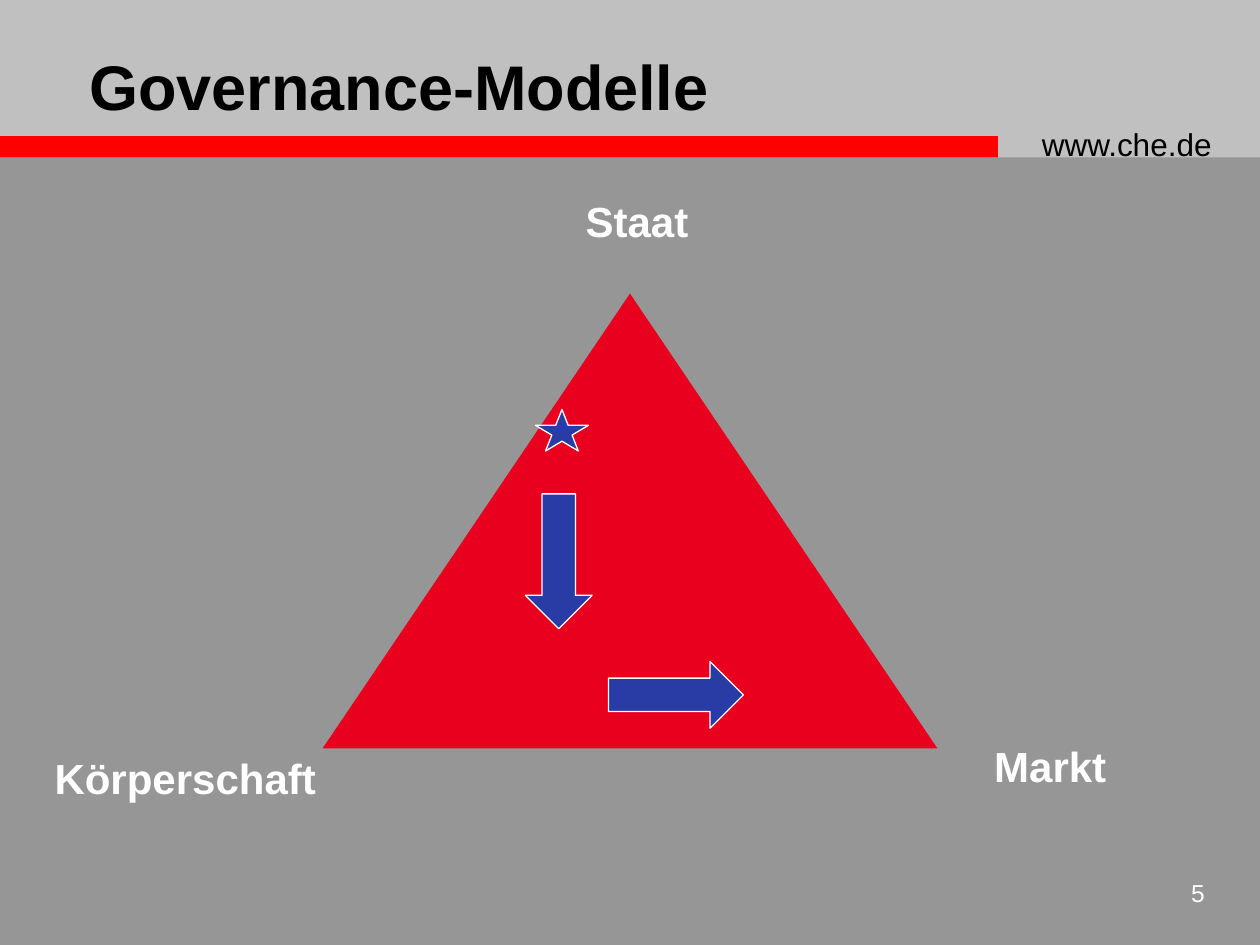
import pptx
import pptx.util
import pptx.dml.color
import pptx.enum.shapes
import pptx.enum.text

Inches = pptx.util.Inches
SHAPE = pptx.enum.shapes.MSO_SHAPE
ALIGN = pptx.enum.text.PP_ALIGN
ANCHOR = pptx.enum.text.MSO_ANCHOR

COLORS = {
    "back": "969696",
    "band": "C0C0C0",
    "bar": "FF0000",
    "area": "E8001E",
    "mark": "293BA5",
    "light": "FFFFFF",
    "dark": "000000",
}


def color(name):
    return pptx.dml.color.RGBColor.from_string(COLORS[name])


def add_form(slide, kind, box, fill, line=None):
    form = slide.shapes.add_shape(kind, *map(Inches, box))
    form.shadow.inherit = False
    form.fill.solid()
    form.fill.fore_color.rgb = color(fill)
    if line:
        form.line.color.rgb = color(line)
        form.line.width = pptx.util.Pt(0.75)
    else:
        form.line.fill.background()


def add_text(slide, text, box, size, ink, bold=False,
             align=ALIGN.LEFT, anchor=ANCHOR.TOP):
    frame = slide.shapes.add_textbox(*map(Inches, box)).text_frame
    frame.word_wrap = True
    frame.vertical_anchor = anchor
    frame.text = text
    para = frame.paragraphs[0]
    para.alignment = align
    font = para.runs[0].font
    font.name = "Arial"
    font.size = pptx.util.Pt(size)
    font.bold = bold
    font.color.rgb = color(ink)


def add_label(slide, text, box):
    add_text(slide, text, box, 24, "light", True, ALIGN.CENTER, ANCHOR.MIDDLE)


def add_mark(slide, kind, box):
    add_form(slide, kind, box, "mark", "light")


def add_frame(slide):
    """Draw the header, title, web address and page number."""
    add_form(slide, SHAPE.RECTANGLE, (0, 0, 10, 1.25), "band")
    add_form(slide, SHAPE.RECTANGLE, (-0.01, 1.08, 7.93, 0.17), "bar")
    add_text(slide, "www.che.de", (8.17, 0.94, 1.75, 0.4), 18, "dark")
    add_text(slide, "5", (9.08, 6.92, 0.58, 0.42), 14, "light",
             align=ALIGN.RIGHT)
    add_text(slide, "Governance-Modelle", (0.61, 0.3, 7.29, 0.75), 36, "dark",
             bold=True, anchor=ANCHOR.MIDDLE)


def main():
    deck = pptx.Presentation()
    deck.slide_width, deck.slide_height = Inches(10), Inches(7.5)
    slide = deck.slides.add_slide(deck.slide_layouts[6])
    slide.background.fill.solid()
    slide.background.fill.fore_color.rgb = color("back")

    add_frame(slide)
    add_form(slide, SHAPE.ISOSCELES_TRIANGLE, (2.56, 2.33, 4.88, 3.61), "area")
    add_label(slide, "Staat", (4.4, 1.5, 1.31, 0.5))
    add_label(slide, "Körperschaft", (0, 5.92, 2.94, 0.5))
    add_label(slide, "Markt", (7.67, 5.83, 1.33, 0.5))
    add_mark(slide, SHAPE.STAR_5_POINT, (4.25, 3.25, 0.42, 0.33))
    add_mark(slide, SHAPE.DOWN_ARROW, (4.17, 3.92, 0.53, 1.07))
    add_mark(slide, SHAPE.RIGHT_ARROW, (4.83, 5.25, 1.07, 0.53))
    deck.save("out.pptx")


if __name__ == "__main__":
    main()
